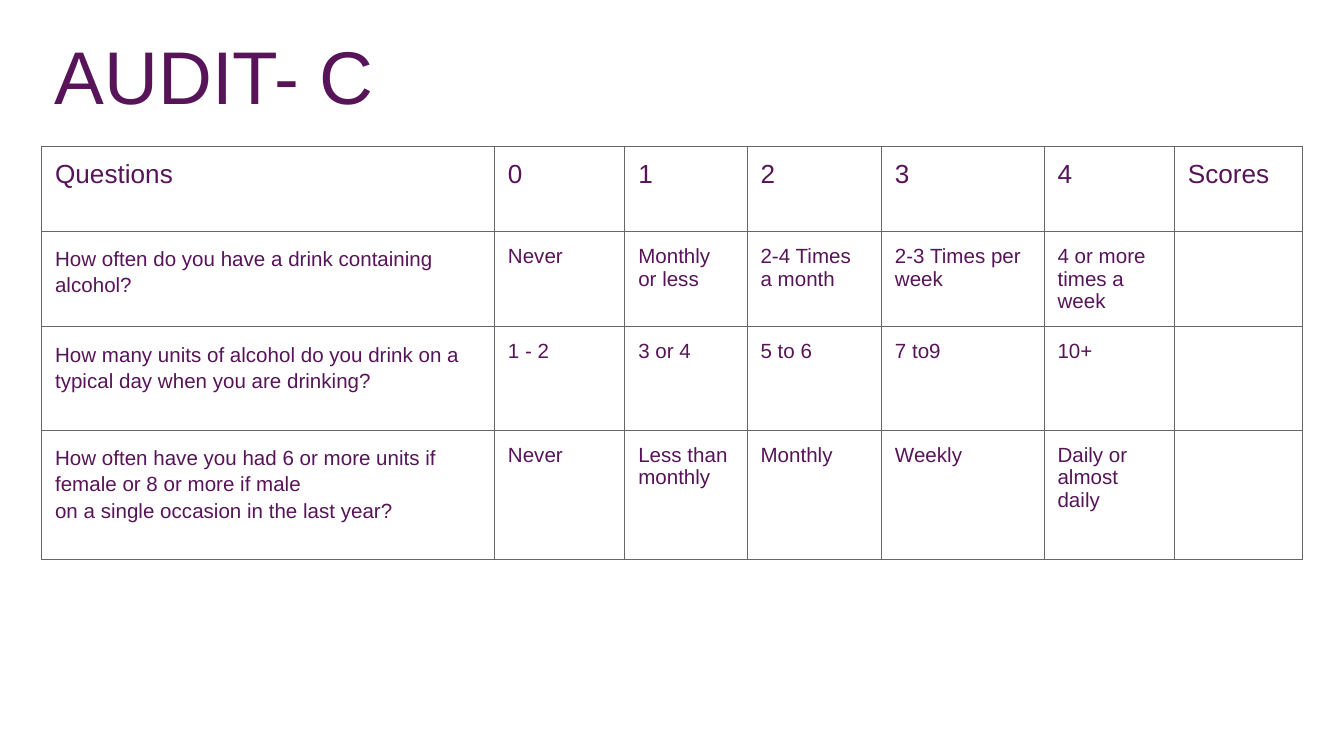
from lxml.etree import SubElement
from pptx import Presentation
from pptx.dml.color import RGBColor
from pptx.oxml.ns import qn
from pptx.util import Inches, Pt

# Content
TITLE = "AUDIT- C"
HEADER = ["Questions", "0", "1", "2", "3", "4", "Scores"]
QUESTIONS = [
    ["How often do you have a drink containing alcohol?",
     "Never", "Monthly or less", "2-4 Times a month", "2-3 Times per week",
     "4 or more times a week", ""],
    ["How many units of alcohol do you drink on a typical day when you are drinking?",
     "1 - 2", "3 or 4", "5 to 6", "7 to9", "10+", ""],
    ["How often have you had 6 or more units if female or 8 or more if male\n"
     "on a single occasion in the last year?",
     "Never", "Less than monthly", "Monthly", "Weekly", "Daily or almost daily", ""],
]

# Layout and style
COLORS = {"text": "571459", "border": "666666", "background": "FFFFFF"}
FONT = "Arial"
COLUMN_WIDTHS = [3.37, 0.97, 0.91, 1, 1.21, 0.97, 0.95]
ROW_HEIGHTS = [0.63, 0.71, 0.77, 0.96]
LEFT, TABLE_TOP, INSET = 0.31, 1.09, 0.1


def write(frame, text, size, line_spacing=None):
    for i, line in enumerate(text.split("\n")):
        paragraph = frame.paragraphs[0] if i == 0 else frame.add_paragraph()
        if line_spacing:
            paragraph.line_spacing = line_spacing
        run = paragraph.add_run()
        run.text = line
        run.font.name = FONT
        run.font.size = Pt(size)
        run.font.color.rgb = RGBColor.from_string(COLORS["text"])


def set_margins(box):
    box.margin_left = box.margin_right = Inches(INSET)
    box.margin_top = box.margin_bottom = Inches(INSET)


def add_borders(cell):
    properties = cell._tc.get_or_add_tcPr()
    for side in ("a:lnL", "a:lnR", "a:lnT", "a:lnB"):
        line = SubElement(properties, qn(side), w=str(Pt(0.75)))
        fill = SubElement(line, qn("a:solidFill"))
        SubElement(fill, qn("a:srgbClr"), val=COLORS["border"])


# Widescreen slide, 16:9
prs = Presentation()
prs.slide_width = Inches(10)
prs.slide_height = Inches(10 * 9 / 16)
slide = prs.slides.add_slide(prs.slide_layouts[6])
slide.background.fill.solid()
slide.background.fill.fore_color.rgb = RGBColor.from_string(COLORS["background"])

# Questionnaire table
rows = [HEADER] + QUESTIONS
questionnaire = slide.shapes.add_table(
    len(rows), len(HEADER), Inches(LEFT), Inches(TABLE_TOP),
    Inches(sum(COLUMN_WIDTHS)), Inches(sum(ROW_HEIGHTS))).table
questionnaire.first_row = questionnaire.horz_banding = False
for column, width in zip(questionnaire.columns, COLUMN_WIDTHS):
    column.width = Inches(width)
for row, height in zip(questionnaire.rows, ROW_HEIGHTS):
    row.height = Inches(height)

for r, row in enumerate(rows):
    for c, text in enumerate(row):
        cell = questionnaire.cell(r, c)
        set_margins(cell)
        add_borders(cell)
        cell.fill.background()
        if text:
            is_question = r > 0 and c == 0
            write(cell.text_frame, text, 11 if r else 14, 1.15 if is_question else None)

# Title
title = slide.shapes.add_textbox(Inches(LEFT), Inches(0.12), Inches(2.92), Inches(0.61))
title.text_frame.word_wrap = True
set_margins(title.text_frame)
write(title.text_frame, TITLE, 40)

prs.save("out.pptx")
